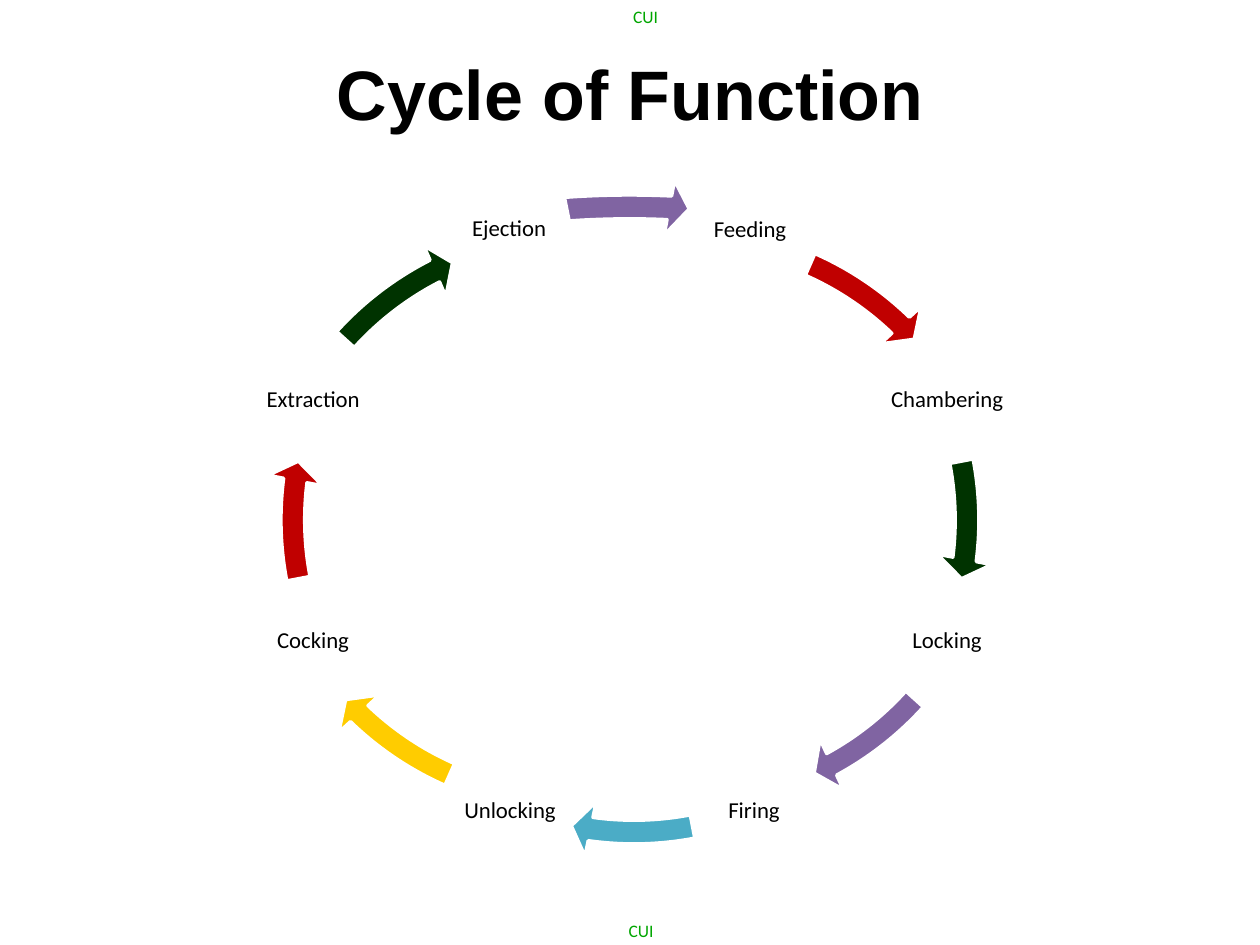
"""Build the Cycle of Function slide: a ring of eight labels joined by curved arrows."""
import pptx
import pptx.dml.color
import pptx.enum.shapes
import pptx.enum.text
import pptx.util

RGB = pptx.dml.color.RGBColor
BLACK = RGB(0x00, 0x00, 0x00)
WHITE = RGB(0xFF, 0xFF, 0xFF)
MARK = RGB(0x00, 0xA6, 0x00)
RED = RGB(0xC0, 0x00, 0x00)
GREEN = RGB(0x00, 0x33, 0x00)
PURPLE = RGB(0x80, 0x64, 0xA2)
TEAL = RGB(0x4B, 0xAC, 0xC6)
GOLD = RGB(0xFF, 0xCC, 0x00)
MIDDLE = pptx.enum.text.MSO_ANCHOR.MIDDLE
ARROW = pptx.enum.shapes.MSO_SHAPE.CIRCULAR_ARROW


def px(*nums):
    return [round(n * 914400 / 126) for n in nums]


def write(box, text, size, font="Calibri", color=BLACK, bold=False, anchor=None, inset=None, lead=None):
    frame = box.text_frame
    frame.word_wrap = True
    frame.auto_size = pptx.enum.text.MSO_AUTO_SIZE.NONE
    if anchor is not None:
        frame.vertical_anchor = anchor
    if inset is not None:
        gap = px(inset)[0]
        frame.margin_left = frame.margin_right = gap
        frame.margin_top = frame.margin_bottom = gap
    para = frame.paragraphs[0]
    para.alignment = pptx.enum.text.PP_ALIGN.CENTER
    para.line_spacing = lead
    run = para.add_run()
    run.text = text
    run.font.name = font
    run.font.size = pptx.util.Pt(size)
    run.font.bold = bold
    run.font.color.rgb = color


deck = pptx.Presentation()
deck.slide_width, deck.slide_height = px(1260, 945)
slide = deck.slides.add_slide(deck.slide_layouts[5])
shapes = slide.shapes

for top, width in [(0, 199), (914, 190)]:
    write(shapes.add_textbox(*px(546, top, width, 32)), "CUI", 10, color=MARK)

title = shapes.title
title.left, title.top, title.width, title.height = px(63, 38, 1134, 110)
write(title, "Cycle of Function", 40, font="Arial", bold=True, anchor=MIDDLE)

steps = [
    ("Feeding", 689, 169, RED, (344, 210, 680, 680), 293.83, 313.95),
    ("Chambering", 886, 339, GREEN, (315, 180, 680, 680), 349.14, 7.25),
    ("Locking", 886, 580, PURPLE, (343, 150, 680, 680), 42.06, 61.53),
    ("Firing", 693, 750, TEAL, (294, 180, 680, 680), 79.17, 97.98),
    ("Unlocking", 449, 750, GOLD, (236, 149, 680, 680), 113.83, 133.95),
    ("Cocking", 252, 580, RED, (265, 180, 680, 680), 169.14, 187.25),
    ("Extraction", 252, 339, GREEN, (237, 209, 680, 680), 222.13, 242.9),
    ("Ejection", 448, 168, PURPLE, (73, 179, 1113, 683), 258.6, 277.25),
]
for name, left, top, color, ring, start, end in steps:
    label = shapes.add_textbox(*px(left, top, 122, 122))
    write(label, name, 13, anchor=MIDDLE, inset=2, lead=0.9)
    arrow = shapes.add_shape(ARROW, *px(*ring))
    arrow.shadow.inherit = False
    arrow.fill.solid()
    arrow.fill.fore_color.rgb = color
    arrow.line.color.rgb = WHITE
    arrow.line.width = pptx.util.Pt(2)
    for i, value in enumerate([0.035, 2.17, end * 0.6, start * 0.6, 0.041]):
        arrow.adjustments[i] = value

deck.save("out.pptx")
